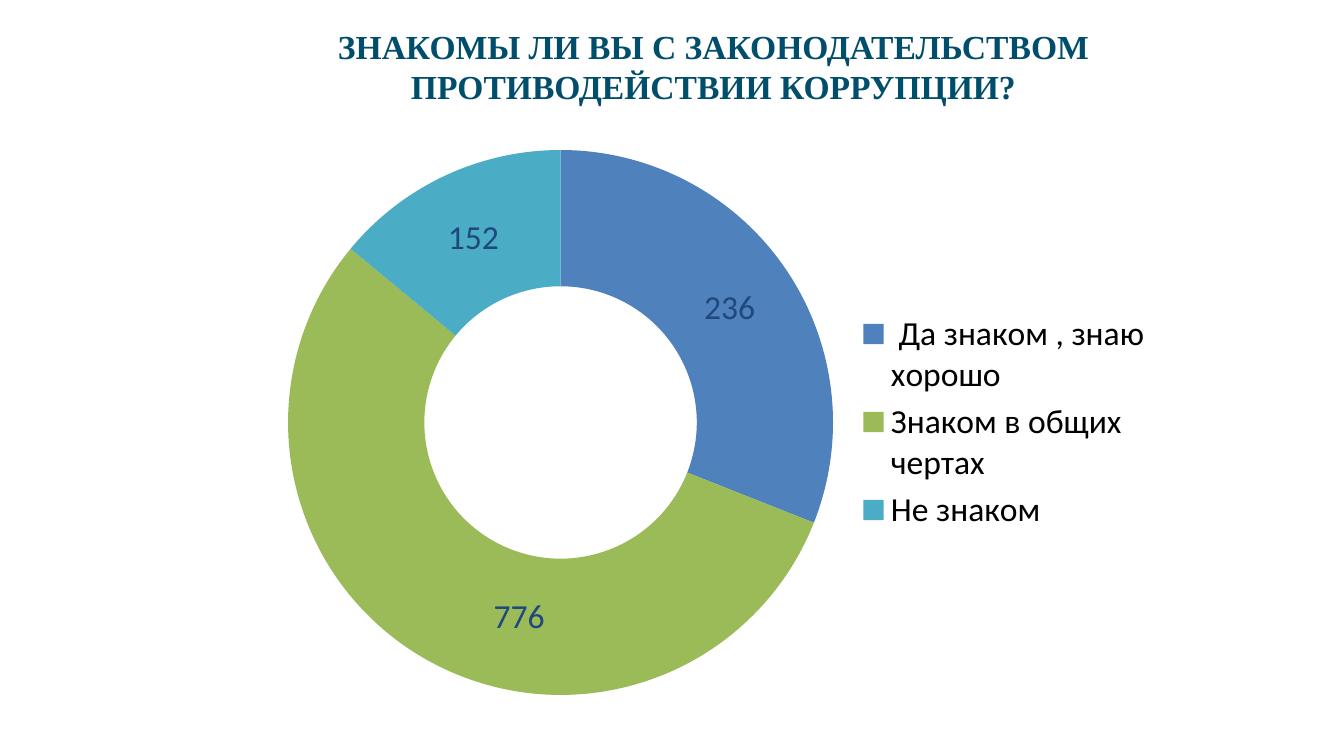
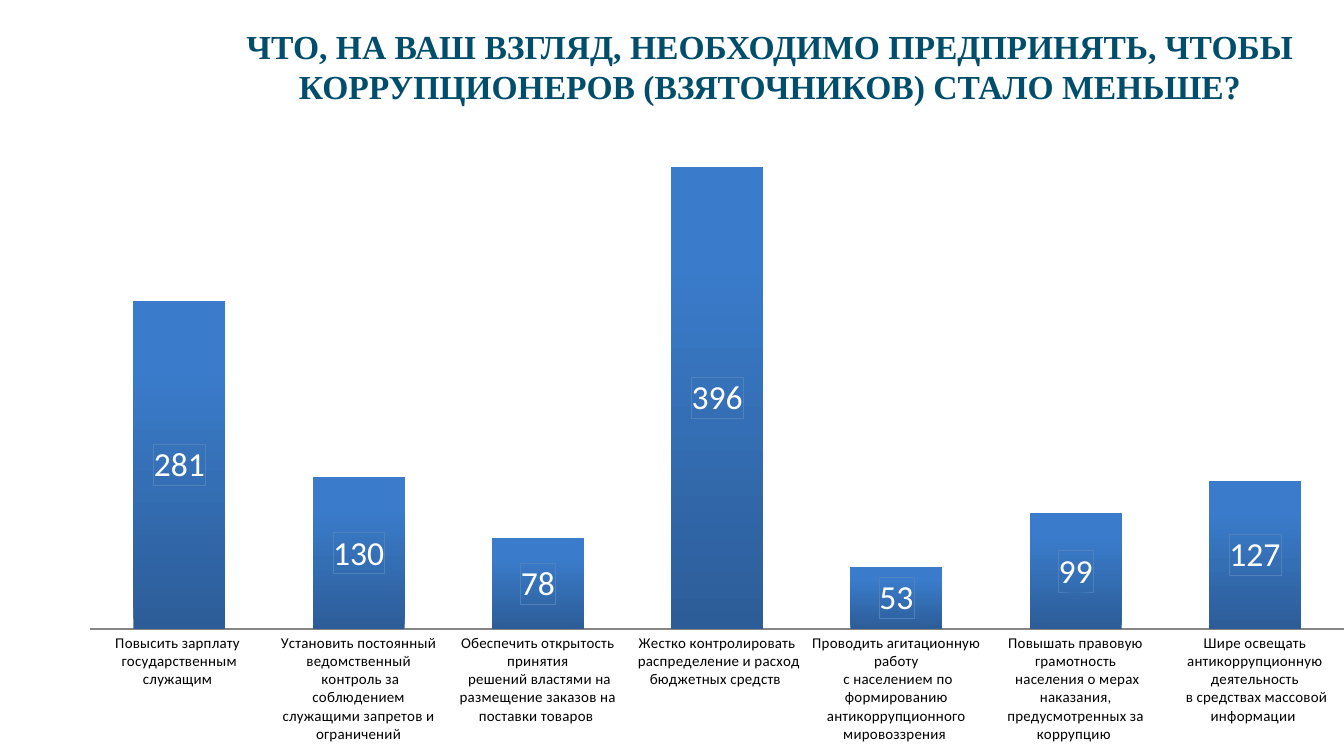
"""Build two survey slides: a doughnut chart and a column chart under matching titles."""
from lxml import etree
from pptx import Presentation, util as u
from pptx.chart.data import CategoryChartData
from pptx.dml.color import RGBColor
from pptx.enum import chart as c, text as t
from pptx.oxml import parse_xml
from pptx.oxml.ns import nsdecls, qn

WIDTH = 10
HEIGHT = WIDTH * 9 / 16
TITLE_TOP, TITLE_WIDTH, TITLE_HEIGHT = 0.14, 8.5, 1.12
TITLE_COLOR, LABEL_COLOR, BLUE = "004E6C", "1F497D", "4F81BD"
BAR_BOTTOM, BAR_TOP, AXIS_COLOR = "2C5D98", "3A7CCB", "868686"
BODY_FONT, TITLE_FONT, SIZE, AXIS_SIZE = "Calibri", "Times New Roman", 18, 8

KNOWLEDGE = {
    "title": "ЗНАКОМЫ ЛИ ВЫ С ЗАКОНОДАТЕЛЬСТВОМ ПРОТИВОДЕЙСТВИИ КОРРУПЦИИ?",
    "title_left": 1.06,
    "kind": c.XL_CHART_TYPE.DOUGHNUT,
    "box": (2.01, 0.92, 6.67, 4.44),
    "plot_percent": (2, 4.4, 60.8, 91.4),
    "answers": [
        (" Да знаком , знаю хорошо ", 31),
        ("Знаком в общих чертах", 55),
        ("Не знаком ", 14),
    ],
}
SECTORS = [("236", BLUE, None), ("776", "9BBB59", (7, 3)), ("152", "4BACC6", None)]

MEASURES = {
    "title": "ЧТО, НА ВАШ ВЗГЛЯД, НЕОБХОДИМО ПРЕДПРИНЯТЬ, ЧТОБЫ "
             "КОРРУПЦИОНЕРОВ (ВЗЯТОЧНИКОВ) СТАЛО МЕНЬШЕ?",
    "title_left": 1.48,
    "kind": c.XL_CHART_TYPE.COLUMN_STACKED,
    "box": (0.36, 0.77, 9.65, 5.04),
    "plot_percent": (3.2, 0, 96.8, 77.6),
    "answers": [
        ("Повысить зарплату \nгосударственным служащим ", 281),
        ("Установить постоянный ведомственный\n контроль за соблюдением "
         "служащими запретов и ограничений", 130),
        ("Обеспечить открытость принятия\n решений властями на "
         "размещение заказов на поставки товаров ", 78),
        ("Жестко контролировать\n распределение и расход бюджетных средств ", 396),
        ("Проводить агитационную работу\n с населением по формированию "
         "антикоррупционного мировоззрения ", 53),
        ("Повышать правовую грамотность\n населения о мерах наказания, "
         "предусмотренных за коррупцию ", 99),
        ("Шире освещать антикоррупционную деятельность\n в средствах "
         "массовой информации ", 127),
    ],
}


def rgb(value):
    return RGBColor.from_string(value)


def style(font, color="000000", size=SIZE, name=BODY_FONT, bold=False):
    font.name, font.size, font.bold = name, u.Pt(size), bold
    font.color.rgb = rgb(color)


def write(frame, text, align=t.PP_ALIGN.CENTER, **font_format):
    frame.text = text
    paragraph = frame.paragraphs[0]
    paragraph.alignment = align
    style(paragraph.runs[0].font, **font_format)


def set_layout(parent, index, percents, modes=()):
    for old in parent.findall(qn("c:layout")):
        parent.remove(old)
    layout = etree.Element(qn("c:layout"))
    manual = etree.SubElement(layout, qn("c:manualLayout"))
    shares = [(tag, round(percent / 100, 4)) for tag, percent in zip("xywh", percents)]
    for tag, value in [*modes, *shares]:
        etree.SubElement(manual, qn("c:" + tag)).set("val", str(value))
    parent.insert(index, layout)


def add_survey(presentation, survey):
    slide = presentation.slides.add_slide(presentation.slide_layouts[5])
    title = slide.shapes.title
    title.left, title.top = u.Inches(survey["title_left"]), u.Inches(TITLE_TOP)
    title.width, title.height = u.Inches(TITLE_WIDTH), u.Inches(TITLE_HEIGHT)
    frame = title.text_frame
    frame.word_wrap, frame.auto_size = True, t.MSO_AUTO_SIZE.NONE
    frame.vertical_anchor = t.MSO_ANCHOR.TOP
    write(frame, survey["title"], color=TITLE_COLOR, name=TITLE_FONT, bold=True)

    names, values = zip(*survey["answers"])
    data = CategoryChartData()
    data.categories = names
    data.add_series("Series 1", values)
    box = map(u.Inches, survey["box"])
    chart = slide.shapes.add_chart(survey["kind"], *box, data).chart
    chart.has_title = chart.has_legend = False
    style(chart.font)
    area = chart.element.find(".//" + qn("c:plotArea"))
    modes = [("layoutTarget", "inner"), ("xMode", "edge"), ("yMode", "edge")]
    set_layout(area, 0, survey["plot_percent"], modes)
    return chart


def format_doughnut(chart):
    chart.has_legend = True
    chart.legend.position = c.XL_LEGEND_POSITION.RIGHT
    chart.legend.include_in_layout = False
    style(chart.legend.font)
    plot = chart.plots[0]
    plot.vary_by_categories = True
    series = plot.series[0]
    labels = series.data_labels
    labels.show_percentage, labels.show_value = True, False
    style(labels.font, color=LABEL_COLOR)
    for index, (label, color, shift) in enumerate(SECTORS):
        point = series.points[index]
        point.format.fill.solid()
        point.format.fill.fore_color.rgb = rgb(color)
        write(point.data_label.text_frame, label, color=LABEL_COLOR)
        if shift:
            set_layout(labels._element.findall(qn("c:dLbl"))[index], 1, shift)


def format_columns(chart):
    plot = chart.plots[0]
    plot.gap_width, plot.overlap, plot.vary_by_categories = 95, 100, False
    fill = plot.series[0].format.fill
    fill.gradient()
    fill.gradient_angle = 90
    for stop, position, color in zip(fill.gradient_stops, (0, 0.8), (BAR_BOTTOM, BAR_TOP)):
        stop.position, stop.color.rgb = position, rgb(color)

    labels = plot.series[0].data_labels
    labels.show_value = True
    labels.position = c.XL_LABEL_POSITION.CENTER
    style(labels.font, color="FFFFFF")
    border = parse_xml(
        f'<c:spPr {nsdecls("c", "a")}><a:noFill/><a:ln w="3175"><a:solidFill>'
        f'<a:srgbClr val="{BLUE}"/></a:solidFill></a:ln></c:spPr>')
    labels._element.find(qn("c:txPr")).addprevious(border)

    values = chart.value_axis
    values.visible = values.has_major_gridlines = False
    values.minimum_scale, values.maximum_scale = 0, 450
    measures = chart.category_axis
    measures.major_tick_mark = measures.minor_tick_mark = c.XL_TICK_MARK.NONE
    measures.format.line.color.rgb = rgb(AXIS_COLOR)
    style(measures.tick_labels.font, size=AXIS_SIZE)


def main():
    presentation = Presentation()
    presentation.slide_width, presentation.slide_height = u.Inches(WIDTH), u.Inches(HEIGHT)
    format_doughnut(add_survey(presentation, KNOWLEDGE))
    format_columns(add_survey(presentation, MEASURES))
    presentation.save("out.pptx")


if __name__ == "__main__":
    main()
